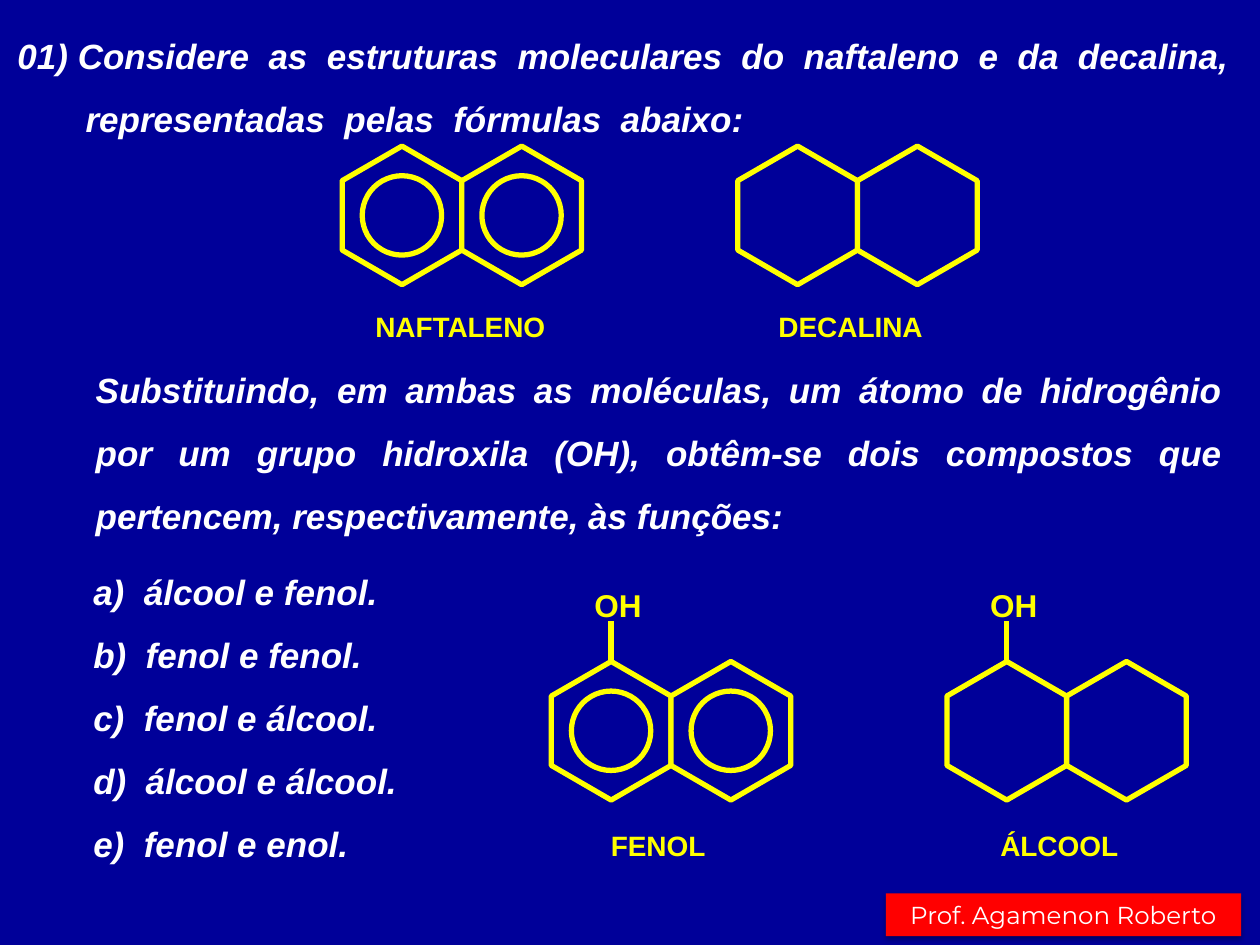
import pptx
import pptx.dml.color
import pptx.enum.shapes
import pptx.enum.text
import pptx.oxml
import pptx.oxml.ns
import pptx.util

BLUE, YELLOW, WHITE, RED = "000099", "FFFF00", "FFFFFF", "FF0000"
SLIDE_SIZE = (10, 7.5)

# (paragraph, left margin, first-line indent)
STATEMENT = [
    ("01) Considere  as  estruturas  moleculares  do  naftaleno  e  da  decalina,", 0.38, -0.38),
    ("representadas  pelas  fórmulas  abaixo:", 0.54, 0),
]
QUESTION = [
    ("Substituindo, em ambas as moléculas, um átomo de hidrogênio por um grupo "
     "hidroxila (OH), obtêm-se dois compostos que pertencem, respectivamente, "
     "às funções:", 0, 0),
]
ANSWERS = [(text, 0, 0) for text in (
    "a)  álcool e fenol.",
    "b)  fenol e fenol.",
    "c)  fenol e álcool.",
    "d)  álcool e álcool.",
    "e)  fenol e enol.",
)]
# (paragraphs, box, left inset, bottom inset)
TEXT_BLOCKS = [
    (STATEMENT, (0.04, 0.08, 9.88, 1.05), 0.1, 0.05),
    (QUESTION, (0.51, 2.73, 9.29, 1.5), 0.25, 0),
    (ANSWERS, (0.44, 4.3, 4.25, 2.57), 0.3, 0),
]
# (name, name box, centre of the left ring, aromatic, has hydroxyl)
MOLECULES = [
    ("NAFTALENO", (2.88, 2.41, 1.59, 0.37), (3.19, 1.71), True, False),
    ("DECALINA", (6.08, 2.41, 1.39, 0.37), (6.33, 1.71), False, False),
    ("FENOL", (4.75, 6.53, 0.96, 0.37), (4.85, 5.8), True, True),
    ("ÁLCOOL", (7.84, 6.53, 1.15, 0.37), (7.99, 5.8), False, True),
]
TEACHER = "Prof. Agamenon Roberto"
TEACHER_BOX = (7.03, 7.09, 2.82, 0.34)

RING_LENGTH, RING_WIDTH, CIRCLE = 1.1, 0.95, 0.63
BOND_LENGTH = 0.32
RING_LINE = 3

Shape = pptx.enum.shapes.MSO_SHAPE
Align = pptx.enum.text.PP_ALIGN
Anchor = pptx.enum.text.MSO_ANCHOR


def color(value):
    return pptx.dml.color.RGBColor.from_string(value)


def inches(values):
    return [pptx.util.Inches(value) for value in values]


def style_font(paragraph, size, value, name="Arial", bold=True, italic=False):
    for run in paragraph.runs:
        run.font.size = pptx.util.Pt(size)
        run.font.name = name
        run.font.bold = bold
        run.font.italic = italic
        run.font.color.rgb = color(value)


def add_text_block(slide, paragraphs, box, left_inset, bottom_inset):
    frame = slide.shapes.add_textbox(*inches(box)).text_frame
    frame.word_wrap = True
    frame.vertical_anchor = Anchor.MIDDLE
    frame.margin_left, frame.margin_bottom = inches((left_inset, bottom_inset))
    frame.text = "\n".join(text for text, _, _ in paragraphs)
    for paragraph, (_, margin, indent) in zip(frame.paragraphs, paragraphs):
        paragraph.alignment = Align.JUSTIFY
        paragraph.line_spacing = 1.5
        properties = paragraph._p.get_or_add_pPr()
        properties.set("marL", str(pptx.util.Inches(margin)))
        properties.set("indent", str(pptx.util.Inches(indent)))
        style_font(paragraph, 20, WHITE, italic=True)


def add_label(slide, text, box, size):
    frame = slide.shapes.add_textbox(*inches(box)).text_frame
    frame.word_wrap = False
    frame.text = text
    style_font(frame.paragraphs[0], size, YELLOW)


def add_outline(slide, preset, center, width, height):
    """Add a blue shape with a yellow line around a centre point."""
    x, y = center
    shape = slide.shapes.add_shape(
        preset, *inches((x - width / 2, y - height / 2, width, height)))
    shape.shadow.inherit = False
    shape.fill.solid()
    shape.fill.fore_color.rgb = color(BLUE)
    shape.line.color.rgb = color(YELLOW)
    shape.line.width = pptx.util.Pt(RING_LINE)
    return shape


def add_hydroxyl(slide, x, ring_top):
    bond_top = ring_top - BOND_LENGTH
    add_label(slide, "OH", (x - 0.23, bond_top - 0.33, 0.6, 0.4), 18)
    bond = slide.shapes.add_connector(
        pptx.enum.shapes.MSO_CONNECTOR.STRAIGHT,
        *inches((x, bond_top, x, ring_top)))
    bond.line.color.rgb = color(YELLOW)
    bond.line.width = pptx.util.Pt(RING_LINE)
    bond._element.spPr.append(pptx.oxml.parse_xml(
        f"<a:effectLst {pptx.oxml.ns.nsdecls('a')}/>"))


def add_molecule(slide, name, name_box, center, aromatic, hydroxyl):
    x, y = center
    for ring_x in (x, x + RING_WIDTH):
        ring = add_outline(slide, Shape.HEXAGON, (ring_x, y), RING_LENGTH, RING_WIDTH)
        ring.adjustments[0] = 0.289
        ring.rotation = 90
        if aromatic:
            add_outline(slide, Shape.OVAL, (ring_x, y), CIRCLE, CIRCLE)
    if hydroxyl:
        add_hydroxyl(slide, x, y - RING_LENGTH / 2)
    add_label(slide, name, name_box, 16)


def add_teacher(slide):
    shape = slide.shapes.add_shape(Shape.RECTANGLE, *inches(TEACHER_BOX))
    shape.fill.solid()
    shape.fill.fore_color.rgb = color(RED)
    shape.line.fill.background()
    shape._element.spPr.append(pptx.oxml.parse_xml(
        f"<a:effectLst {pptx.oxml.ns.nsdecls('a')}>"
        '<a:outerShdw blurRad="40000" dist="23000" dir="5400000" rotWithShape="0">'
        '<a:srgbClr val="000000"><a:alpha val="35000"/></a:srgbClr>'
        "</a:outerShdw></a:effectLst>"))
    frame = shape.text_frame
    frame.word_wrap = False
    frame.vertical_anchor = Anchor.MIDDLE
    frame.text = TEACHER
    frame.paragraphs[0].alignment = Align.CENTER
    style_font(frame.paragraphs[0], 14, WHITE, "Montserrat", bold=False)


def main():
    presentation = pptx.Presentation()
    presentation.slide_width, presentation.slide_height = inches(SLIDE_SIZE)
    slide = presentation.slides.add_slide(presentation.slide_layouts[6])
    slide.background.fill.solid()
    slide.background.fill.fore_color.rgb = color(BLUE)
    for block in TEXT_BLOCKS:
        add_text_block(slide, *block)
    for molecule in MOLECULES:
        add_molecule(slide, *molecule)
    add_teacher(slide)
    presentation.save("out.pptx")


if __name__ == "__main__":
    main()
